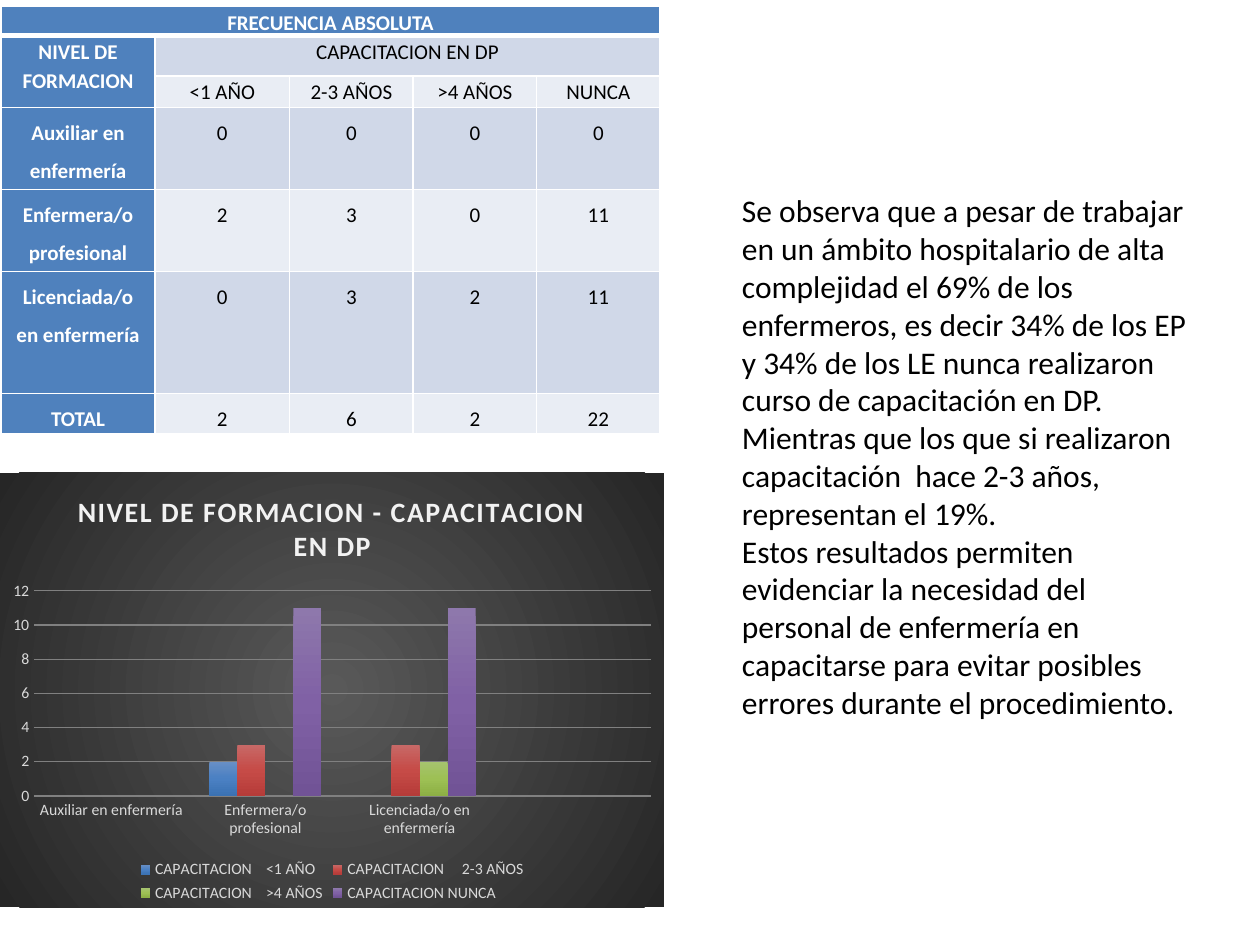
from pptx import Presentation
from pptx.chart.data import CategoryChartData
from pptx.dml.color import RGBColor
from pptx.enum.chart import XL_CHART_TYPE, XL_LEGEND_POSITION, XL_TICK_MARK
from pptx.enum.text import MSO_AUTO_SIZE, PP_ALIGN
from pptx.oxml import parse_xml
from pptx.oxml.ns import nsdecls, qn
from pptx.util import Inches, Pt

FONT = "Calibri"
WHITE = RGBColor(0xFF, 0xFF, 0xFF)
BLACK = RGBColor(0, 0, 0)
BLUE = RGBColor(0x4F, 0x81, 0xBD)
DARK_BAND = RGBColor(0xD0, 0xD8, 0xE8)
LIGHT_BAND = RGBColor(0xE9, 0xED, 0xF4)
TITLE_GRAY = RGBColor(0xF2, 0xF2, 0xF2)
LABEL_GRAY = RGBColor(0xD9, 0xD9, 0xD9)
GRID_GRAY = RGBColor(0x80, 0x80, 0x80)
AREA_COLORS = (RGBColor(0x59, 0x59, 0x59), RGBColor(0x26, 0x26, 0x26))

COLUMN_WIDTHS = (1.22, 1.07, 0.98, 0.98, 0.98)
ROW_HEIGHTS = (0.23, 0.32, 0.25, 0.65, 0.65, 0.97, 0.32)
LEVELS = ("Auxiliar en enfermería", "Enfermera/o profesional", "Licenciada/o en enfermería")
ROWS = (
    ("FRECUENCIA ABSOLUTA", "", "", "", ""),
    ("NIVEL DE FORMACION", "CAPACITACION EN DP", "", "", ""),
    ("", "<1 AÑO", "2-3 AÑOS", ">4 AÑOS", "NUNCA"),
    (LEVELS[0], "0", "0", "0", "0"),
    (LEVELS[1], "2", "3", "0", "11"),
    (LEVELS[2], "0", "3", "2", "11"),
    ("TOTAL", "2", "6", "2", "22"),
)
HEADER_ROWS = 3

SERIES = (
    ("CAPACITACION    <1 AÑO", (0, 2, 0, None),
     (RGBColor(0x68, 0x8F, 0xC5), RGBColor(0x4A, 0x80, 0xC3), RGBColor(0x3B, 0x72, 0xB3))),
    ("CAPACITACION     2-3 AÑOS", (0, 3, 3, None),
     (RGBColor(0xC7, 0x69, 0x67), RGBColor(0xC6, 0x4B, 0x47), RGBColor(0xB6, 0x3C, 0x39))),
    ("CAPACITACION    >4 AÑOS", (0, 0, 2, None),
     (RGBColor(0xA6, 0xC3, 0x6F), RGBColor(0x9D, 0xC0, 0x54), RGBColor(0x8D, 0xB0, 0x45))),
    ("CAPACITACION NUNCA", (0, 11, 11, None),
     (RGBColor(0x8E, 0x78, 0xAC), RGBColor(0x80, 0x61, 0xA5), RGBColor(0x71, 0x53, 0x96))),
)
COMMENTS = (
    "Se observa que a pesar de trabajar en un ámbito hospitalario de alta complejidad "
    "el 69% de los enfermeros, es decir 34% de los EP y 34% de los LE nunca realizaron "
    "curso de capacitación en DP. Mientras que los que si realizaron capacitación  hace "
    "2-3 años, representan el 19%.",
    "Estos resultados permiten evidenciar la necesidad del personal de enfermería en "
    "capacitarse para evitar posibles errores durante el procedimiento.",
)


def style_font(font, size, color, bold=False):
    font.name = FONT
    font.size = Pt(size)
    font.bold = bold
    font.color.rgb = color


def add_run(para, text, size, color, bold=False):
    span = para.add_run()
    span.text = text
    style_font(span.font, size, color, bold)
    return span


def gradient(colors, direction):
    """Return a gradFill with evenly spaced stops."""
    step = 100000 // (len(colors) - 1)
    stops = "".join(
        f'<a:gs pos="{i * step}"><a:srgbClr val="{color}"/></a:gs>'
        for i, color in enumerate(colors))
    return f"<a:gradFill><a:gsLst>{stops}</a:gsLst>{direction}</a:gradFill>"


def add_borders(cell, bottom_width):
    properties = cell._tc.get_or_add_tcPr()
    for side in "LRTB":
        width = Pt(bottom_width if side == "B" else 1)
        properties.append(parse_xml(
            f'<a:ln{side} {nsdecls("a")} w="{width}"><a:solidFill>'
            f'<a:srgbClr val="{WHITE}"/></a:solidFill></a:ln{side}>'))


def fill_cell(cell, text, row, column):
    is_label = row == 0 or column == 0
    band = DARK_BAND if row % 2 else LIGHT_BAND
    cell.margin_left = cell.margin_right = Inches(0.07)
    cell.margin_top = cell.margin_bottom = 0
    add_borders(cell, 3 if row == 0 else 1)
    cell.fill.solid()
    cell.fill.fore_color.rgb = BLUE if is_label else band
    para = cell.text_frame.paragraphs[0]
    para.alignment = PP_ALIGN.CENTER
    para.line_spacing = 1.15 if row < HEADER_ROWS else 1.5
    para.space_after = Pt(10 if row < HEADER_ROWS else 0)
    para.font.size = Pt(12)
    if text:
        add_run(para, text, 12, WHITE if is_label else BLACK, is_label)


def add_frequency_table(slide):
    table = slide.shapes.add_table(
        len(ROWS), len(COLUMN_WIDTHS), Inches(0.01), Inches(0.05),
        Inches(sum(COLUMN_WIDTHS)), Inches(sum(ROW_HEIGHTS))).table
    table.first_row = table.horz_banding = False
    for column, width in zip(table.columns, COLUMN_WIDTHS):
        column.width = Inches(width)
    for row, height in zip(table.rows, ROW_HEIGHTS):
        row.height = Inches(height)
    for r, texts in enumerate(ROWS):
        for c, text in enumerate(texts):
            fill_cell(table.cell(r, c), text, r, c)
    for first, last in (((0, 0), (0, 4)), ((1, 0), (2, 0)), ((1, 1), (1, 4))):
        table.cell(*first).merge(table.cell(*last))


def fill_chart_area(chart):
    circle = ('<a:path path="circle"><a:fillToRect l="50000" t="50000" '
              'r="50000" b="50000"/></a:path>')
    chart._chartSpace.find(qn("c:chart")).addnext(parse_xml(
        f'<c:spPr {nsdecls("c", "a")}>{gradient(AREA_COLORS, circle)}'
        '<a:ln><a:noFill/></a:ln></c:spPr>'))


def fill_series(series, colors):
    series.format.fill.solid()
    properties = series._element.find(qn("c:spPr"))
    fill = gradient(colors, '<a:lin ang="5400000" scaled="0"/>')
    properties.replace(
        properties.find(qn("a:solidFill")),
        parse_xml(fill.replace("<a:gradFill>", f'<a:gradFill {nsdecls("a")}>', 1)))


def style_axis(axis):
    axis.major_tick_mark = axis.minor_tick_mark = XL_TICK_MARK.NONE
    axis.format.line.fill.background()
    style_font(axis.tick_labels.font, 9, LABEL_GRAY)


def add_training_chart(slide):
    data = CategoryChartData()
    data.categories = LEVELS + ("",)
    for name, values, _ in SERIES:
        data.add_series(name, values)
    chart = slide.shapes.add_chart(
        XL_CHART_TYPE.COLUMN_CLUSTERED, Inches(0), Inches(3.75),
        Inches(5.27), Inches(3.45), data).chart
    style_font(chart.font, 10, BLACK)
    fill_chart_area(chart)

    chart.has_title = True
    span = add_run(chart.chart_title.text_frame.paragraphs[0],
                   "NIVEL DE FORMACION - CAPACITACION EN DP", 16, TITLE_GRAY, True)
    span._r.get_or_add_rPr().set("spc", "100")
    chart.chart_title.include_in_layout = False

    chart.has_legend = True
    chart.legend.position = XL_LEGEND_POSITION.BOTTOM
    chart.legend.include_in_layout = False
    style_font(chart.legend.font, 9, LABEL_GRAY)

    style_axis(chart.category_axis)
    style_axis(chart.value_axis)
    grid = chart.value_axis.major_gridlines.format.line
    grid.color.rgb = GRID_GRAY
    grid.width = Pt(0.75)

    plot = chart.plots[0]
    plot.gap_width = 150
    plot.vary_by_categories = False
    for series, (_, _, colors) in zip(plot.series, SERIES):
        fill_series(series, colors)


def add_comments(slide):
    box = slide.shapes.add_textbox(Inches(5.79), Inches(1.47), Inches(3.82), Inches(4.34))
    frame = box.text_frame
    frame.word_wrap = True
    frame.auto_size = MSO_AUTO_SIZE.SHAPE_TO_FIT_TEXT
    for i, text in enumerate(COMMENTS):
        para = frame.add_paragraph() if i else frame.paragraphs[0]
        add_run(para, text, 18, BLACK)


def main():
    deck = Presentation()
    deck.slide_width, deck.slide_height = Inches(10), Inches(7.5)
    slide = deck.slides.add_slide(deck.slide_layouts[6])
    add_frequency_table(slide)
    add_training_chart(slide)
    add_comments(slide)
    deck.save("out.pptx")


if __name__ == "__main__":
    main()
